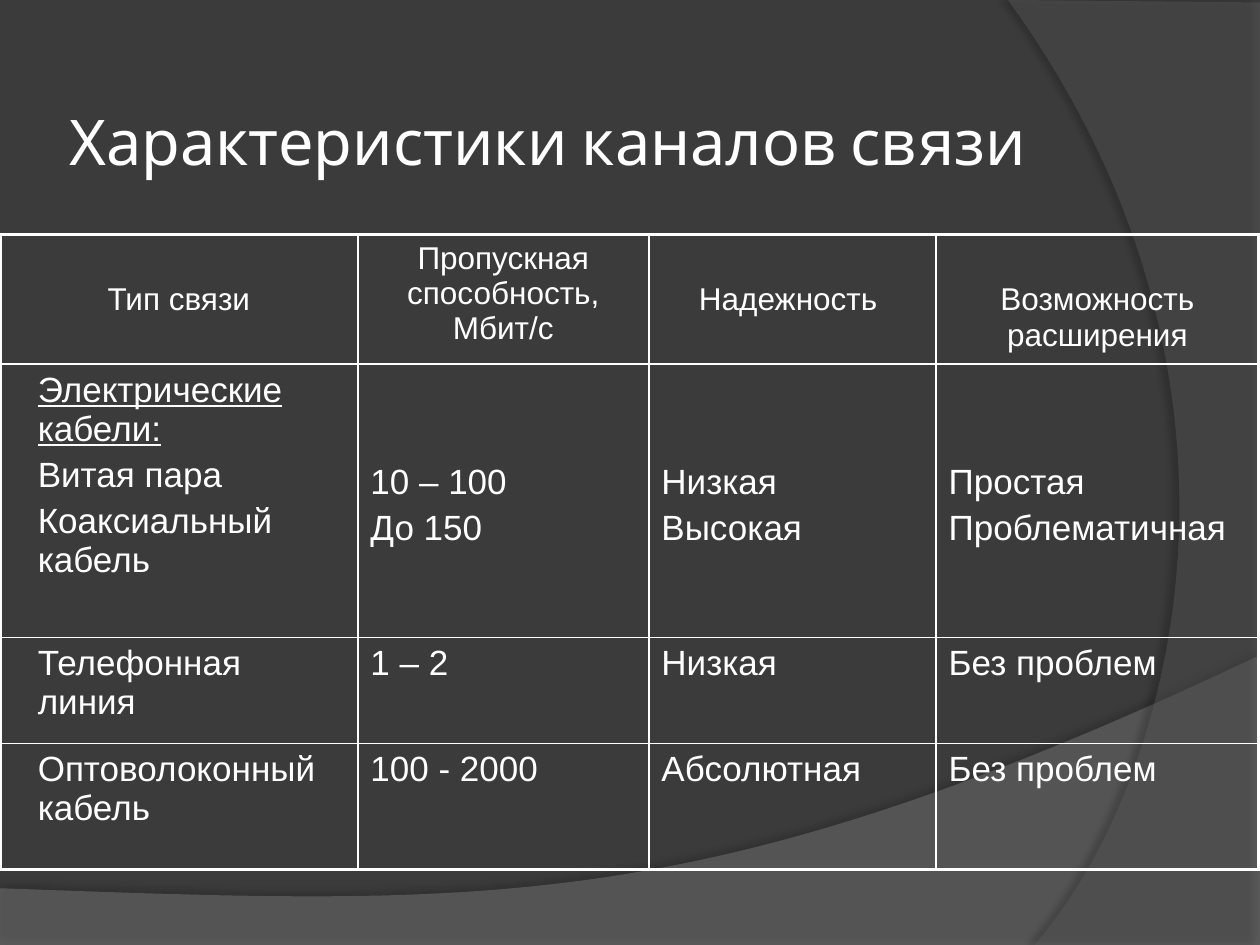
"""Build a slide comparing the characteristics of communication channels."""
from dataclasses import dataclass

import lxml.etree
import pptx
import pptx.dml.color
import pptx.enum.text
import pptx.oxml.ns
import pptx.util
from pptx.util import Inches


@dataclass(frozen=True)
class Theme:
    background: str = "3B3B3B"
    wave: str = "7F7F7F"
    arc: str = "5E5E5E"
    shadow: str = "000000"
    text: str = "FFFFFF"
    heading_font: str = "Cabin"
    body_font: str = "Arial"
    title_size: float = 36
    header_size: float = 18
    body_size: float = 20
    outer_border: float = 2.25
    inner_border: float = 1


def add_element(parent, tag, **attributes):
    element = lxml.etree.SubElement(parent, pptx.oxml.ns.qn(tag))
    for name, value in attributes.items():
        element.set(name, str(value))
    return element


def style_paragraph(paragraph, font_name, size):
    paragraph.font.name = font_name
    paragraph.font.size = pptx.util.Pt(size)
    paragraph.font.color.rgb = pptx.dml.color.RGBColor.from_string(theme.text)


theme = Theme()
presentation = pptx.Presentation()
presentation.slide_width = Inches(10)
presentation.slide_height = Inches(7.5)
slide = presentation.slides.add_slide(presentation.slide_layouts[6])
slide.background.fill.solid()
slide.background.fill.fore_color.rgb = pptx.dml.color.RGBColor.from_string(theme.background)

curve_steps = 60
backdrops = [
    ([(0, 7.05), (0, 7.5), (10, 7.5)],
     [(10, 5.2), (5.59, 7.29), (3.91, 7.19), (0, 7.05)],
     theme.wave, 45, 35, 3.5, 270),
    ([(10, 0.02), (10, 7.5)],
     [(8.21, 7.5), (9.35, 6.19), (10.18, 3), (8, 0)],
     theme.arc, 40, 45, 4, 180),
]
for corners, controls, color, opacity, shadow_opacity, distance, direction in backdrops:
    points = list(corners)
    for step in range(curve_steps + 1):
        t = step / curve_steps
        weights = [(1 - t) ** 3, 3 * t * (1 - t) ** 2, 3 * t ** 2 * (1 - t), t ** 3]
        points.append(tuple(sum(w * c[axis] for w, c in zip(weights, controls)) for axis in (0, 1)))
    outline = [(Inches(x), Inches(y)) for x, y in points]
    builder = slide.shapes.build_freeform(*outline[0])
    builder.add_line_segments(outline[1:], close=True)
    shape = builder.convert_to_shape()
    shape.line.fill.background()
    shape.fill.solid()
    shape.fill.fore_color.rgb = pptx.dml.color.RGBColor.from_string(color)
    fill_color = shape.fill._xPr.find(".//" + pptx.oxml.ns.qn("a:srgbClr"))
    add_element(fill_color, "a:alpha", val=opacity * 1000)
    shape.shadow.inherit = False
    effects = shape._element.spPr.find(pptx.oxml.ns.qn("a:effectLst"))
    shadow = add_element(effects, "a:outerShdw", blurRad=pptx.util.Pt(4),
                         dist=pptx.util.Pt(distance), dir=direction * 60000,
                         algn="ctr", rotWithShape=0)
    shadow_color = add_element(shadow, "a:srgbClr", val=theme.shadow)
    add_element(shadow_color, "a:alpha", val=shadow_opacity * 1000)

title = slide.shapes.add_textbox(Inches(0.5), Inches(0.49), Inches(9), Inches(1.25))
title_frame = title.text_frame
title_frame.word_wrap = True
title_frame.vertical_anchor = pptx.enum.text.MSO_ANCHOR.MIDDLE
title_frame.margin_left = title_frame.margin_right = Inches(0.05)
title_frame.text = "Характеристики каналов связи"
style_paragraph(title_frame.paragraphs[0], theme.heading_font, theme.title_size)

column_widths = [2.84, 2.31, 2.28, 2.56]
row_heights = [1.02, 2.17, 0.84, 1]
rows = [
    ["Тип связи", "Пропускная способность, Мбит/с", "Надежность ", "Возможность расширения"],
    ["Электрические кабели:\nВитая пара\nКоаксиальный кабель",
     "10 – 100\nДо 150", "Низкая\nВысокая", "Простая\nПроблематичная"],
    ["Телефонная линия", "1 – 2", "Низкая", "Без проблем"],
    ["Оптоволоконный кабель", "100 - 2000", "Абсолютная", "Без проблем"],
]
top_margins = {(0, 0): 0.38, (0, 2): 0.38, (0, 3): 0.38,
               (1, 1): 0.78, (1, 2): 0.78, (1, 3): 0.78}
last_row, last_column = len(rows) - 1, len(column_widths) - 1

table = slide.shapes.add_table(len(rows), len(column_widths), Inches(0), Inches(1.86),
                               Inches(10), Inches(sum(row_heights))).table
table.first_row = False
table.horz_banding = False
for column, width in zip(table.columns, column_widths):
    column.width = Inches(width)
for row, height in zip(table.rows, row_heights):
    row.height = Inches(height)

for row_index, texts in enumerate(rows):
    for column_index, text in enumerate(texts):
        is_header = row_index == 0
        cell = table.cell(row_index, column_index)
        cell.text = text
        cell.margin_top = Inches(top_margins.get((row_index, column_index), 0.05))
        if column_index == 0 and not is_header:
            cell.margin_left = Inches(0.3)
        for paragraph in cell.text_frame.paragraphs:
            style_paragraph(paragraph, theme.body_font,
                            theme.header_size if is_header else theme.body_size)
            paragraph.space_before = pptx.util.Pt(4)
            if is_header:
                paragraph.alignment = pptx.enum.text.PP_ALIGN.CENTER
            if paragraph.text.endswith(":"):
                paragraph.font.underline = True
                paragraph.runs[0].font.underline = True
        outer_edges = {"a:lnL": column_index == 0, "a:lnR": column_index == last_column,
                       "a:lnT": row_index == 0, "a:lnB": row_index == last_row}
        for tag, is_outer in outer_edges.items():
            border_width = theme.outer_border if is_outer else theme.inner_border
            border = add_element(cell._tc.get_or_add_tcPr(), tag, w=pptx.util.Pt(border_width))
            add_element(add_element(border, "a:solidFill"), "a:srgbClr", val=theme.text)
        cell.fill.background()

presentation.save("out.pptx")
